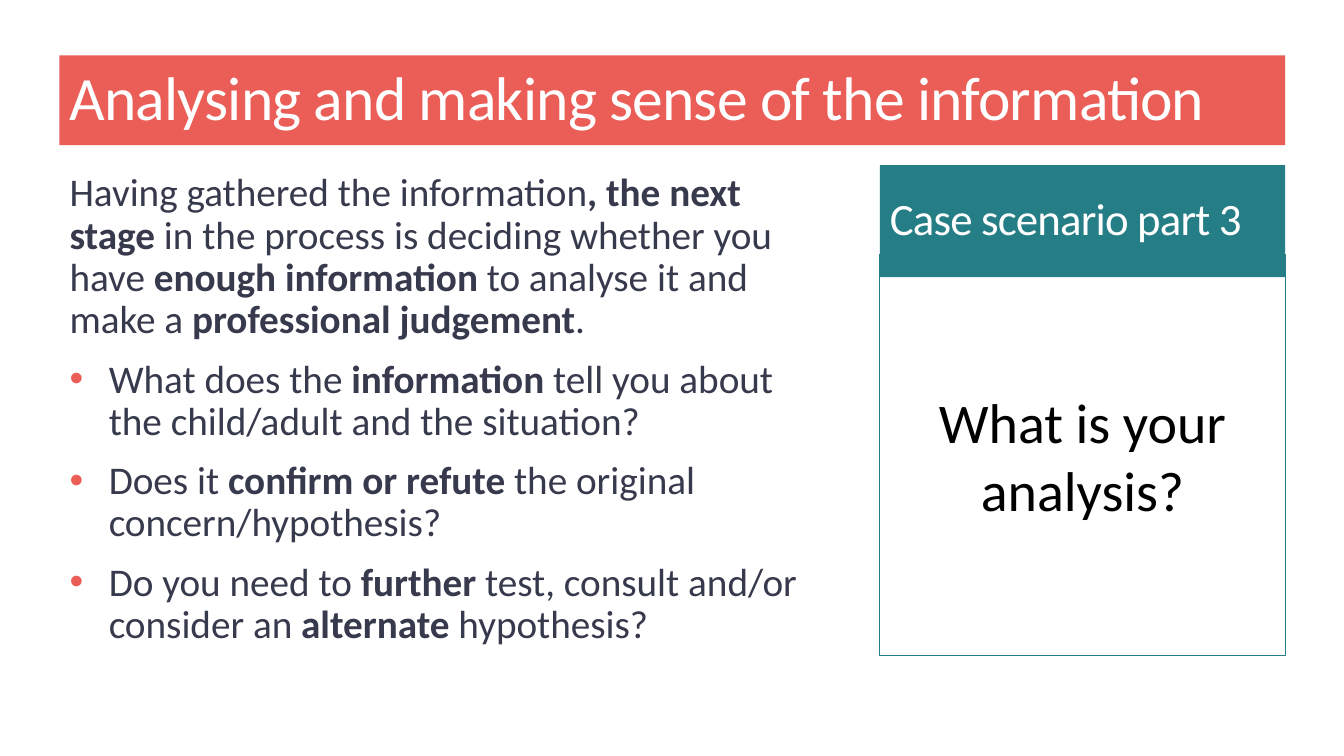
from lxml import etree
from pptx import Presentation
from pptx import util as u
from pptx.dml.color import RGBColor
from pptx.enum import shapes, text
from pptx.oxml import ns

THEME = {
    "font": "Calibri",
    "coral": "EB5E57",
    "teal": "257D86",
    "ink": "37394C",
    "white": "FFFFFF",
    "black": "000000",
    "title": 44,
    "body": 28,
    "head": 32,
    "ask": 40,
}

INTRO = (
    "Having gathered the information*, the next stage *in the process is deciding "
    "whether you have *enough information *to analyse it and make a "
    "*professional judgement*."
)
POINTS = [
    "What does the *information* tell you about the child/adult and the situation?",
    "Does it *confirm or refute *the original concern/hypothesis?",
    "Do you need to *further* test, consult and/or consider an *alternate* hypothesis?",
]


def tint(name):
    return RGBColor.from_string(THEME[name])


def apply(item, form):
    for key, value in form.items():
        setattr(item, key, value)


def place(shape, box):
    sides = ("left", "top", "width", "height")
    apply(shape, {side: u.Pt(size) for side, size in zip(sides, box)})


def paint(shape, name):
    shape.fill.solid()
    shape.fill.fore_color.rgb = tint(name)


def write(para, words, size, color, track=0, **form):
    apply(para, form)
    for turn, part in enumerate(words.split("*")):
        run = para.add_run()
        apply(run, {"text": part})
        apply(run.font, {"name": THEME["font"], "size": u.Pt(THEME[size]), "bold": turn % 2 == 1})
        run.font.color.rgb = tint(color)
        if track:
            run.font._element.set("spc", str(track))


def frame(shape, anchor):
    apply(shape.text_frame, {
        "word_wrap": True,
        "auto_size": text.MSO_AUTO_SIZE.NONE,
        "vertical_anchor": anchor,
    })
    return shape.text_frame


def bullet(para, mark):
    props = para._p.get_or_add_pPr()
    indent = u.Pt(28) if mark else 0
    props.set("marL", str(indent))
    props.set("indent", str(-indent))
    if not mark:
        etree.SubElement(props, ns.qn("a:buNone"))
        return
    color = etree.SubElement(props, ns.qn("a:buClr"))
    etree.SubElement(color, ns.qn("a:srgbClr"), val=THEME["coral"])
    etree.SubElement(props, ns.qn("a:buFont"), typeface="Arial")
    etree.SubElement(props, ns.qn("a:buChar"), char=mark)


def banner(slide, box):
    title = slide.shapes.title
    place(title, box)
    paint(title, "coral")
    words = frame(title, text.MSO_ANCHOR.MIDDLE)
    write(words.paragraphs[0], "Analysing and making sense of the information",
          "title", "white", -60, line_spacing=0.9, alignment=text.PP_ALIGN.LEFT)


def prose(slide, box):
    body = slide.placeholders[1]
    place(body, box)
    words = frame(body, text.MSO_ANCHOR.TOP)
    apply(words, {"margin_top": u.Pt(5.6), "margin_bottom": u.Pt(5.6)})
    for rank, line in enumerate([INTRO] + POINTS):
        para = words.add_paragraph() if rank else words.paragraphs[0]
        bullet(para, "•" if rank else "")
        write(para, line, "body", "ink", line_spacing=0.9,
              space_before=u.Pt(12 if rank else 0))


def panel(slide, box):
    shape = slide.shapes.add_shape(shapes.MSO_SHAPE.RECTANGLE, *map(u.Pt, box))
    shape.shadow.inherit = False
    return shape, frame(shape, text.MSO_ANCHOR.MIDDLE).paragraphs[0]


def case(slide, box):
    left, top, width, height = box
    head, para = panel(slide, (left, top, width, 80))
    paint(head, "teal")
    head.line.fill.background()
    write(para, "Case scenario part 3", "head", "white", -60,
          line_spacing=0.9, alignment=text.PP_ALIGN.LEFT)
    drop = 64
    ask, para = panel(slide, (left, top + drop, width, height - drop))
    ask.fill.background()
    ask.line.color.rgb = tint("teal")
    ask.line.width = u.Pt(0.75)
    write(para, "What is your analysis?", "ask", "black",
          alignment=text.PP_ALIGN.CENTER)


def main():
    deck = Presentation()
    apply(deck, {"slide_width": u.Pt(960), "slide_height": u.Pt(540)})
    slide = deck.slides.add_slide(deck.slide_layouts[1])
    left, right, top = 42.5, 918, 118
    wide = 289.5
    banner(slide, (left, 39.6, right - left, 64))
    prose(slide, (left, top, 559.5, 412.5))
    case(slide, (right - wide, top, wide, 350))
    deck.save("out.pptx")


if __name__ == "__main__":
    main()
